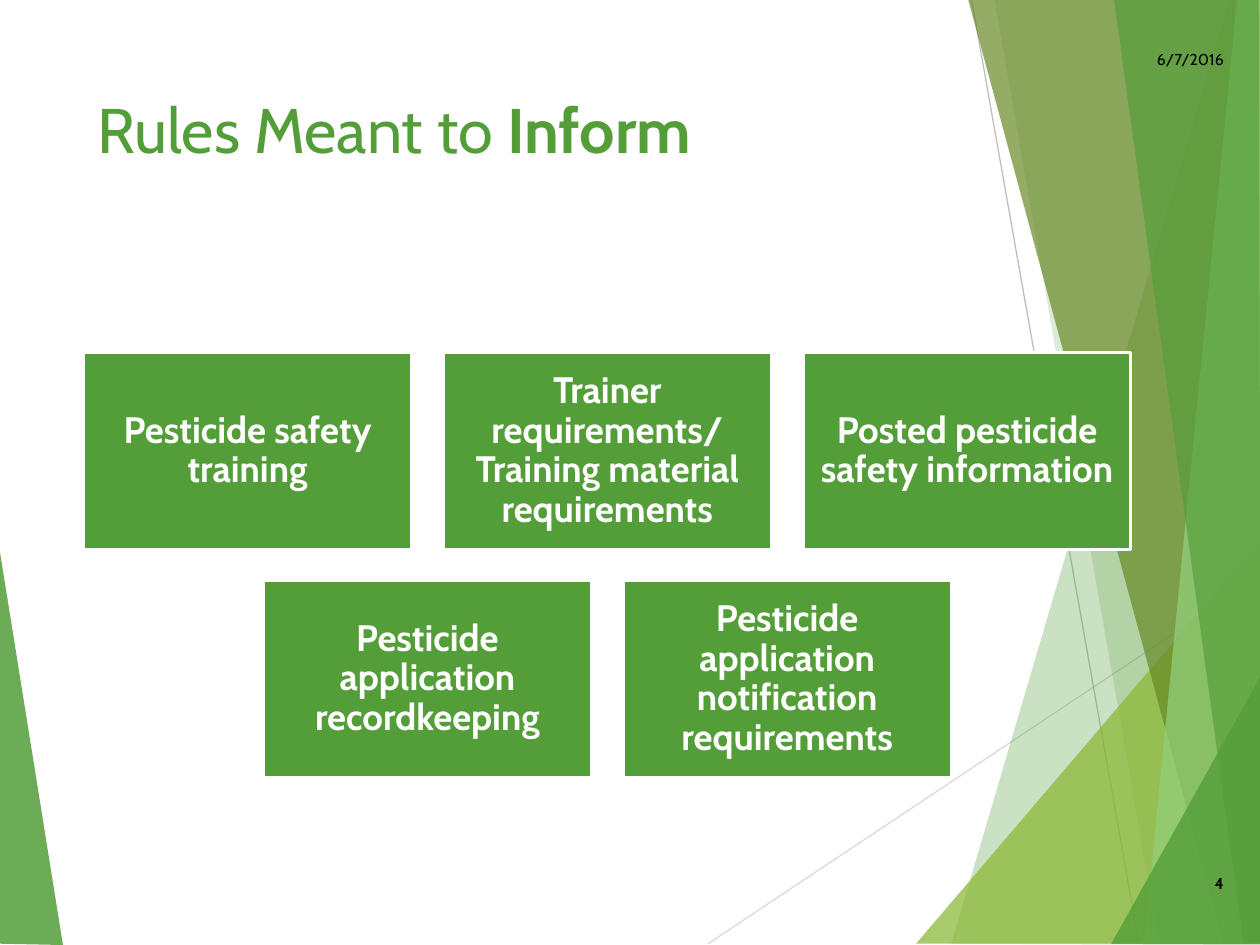
from dataclasses import dataclass

from lxml import etree
from pptx import Presentation
from pptx.dml.color import RGBColor
from pptx.enum.shapes import MSO_CONNECTOR, MSO_SHAPE
from pptx.enum.text import MSO_ANCHOR, PP_ALIGN
from pptx.oxml.ns import qn
from pptx.util import Inches, Pt

STRAIGHT = MSO_CONNECTOR.STRAIGHT
RECT = MSO_SHAPE.RECTANGLE
TOP, MIDDLE = MSO_ANCHOR.TOP, MSO_ANCHOR.MIDDLE
LEFT, CENTER, RIGHT = PP_ALIGN.LEFT, PP_ALIGN.CENTER, PP_ALIGN.RIGHT


@dataclass(frozen=True)
class Theme:
    font: str = "Cabin"
    green: str = "549E39"
    lime: str = "8AB833"
    olive: str = "678A26"
    mint: str = "93D07D"
    white: str = "FFFFFF"
    black: str = "000000"
    pale_gray: str = "D9D9D9"
    gray: str = "BFBFBF"
    title_size: int = 36
    box_size: int = 21
    small_size: int = 9


theme = Theme()


def rgb(color):
    return RGBColor.from_string(color)


def style_text(p, size, color, align, bold=False):
    p.alignment = align
    for r in p.runs:
        r.font.name = theme.font
        r.font.size = Pt(size)
        r.font.color.rgb = rgb(color)
        r.font.bold = bold


prs = Presentation()
prs.slide_width, prs.slide_height = Inches(10), Inches(7.5)
s = prs.slides.add_slide(prs.slide_layouts[5])

# Background facets: points, colour, opacity in percent; the thin lines lie above the first
left_facet = ([(0, 4.38), (0.5, 7.5), (0, 7.49)], theme.green, 85)
right_facets = [
    ([(9.76, -0.01), (7.55, 7.49), (10.03, 7.5), (10.02, 0)], theme.green, 30),
    ([(7.89, -0.02), (9.2, 7.49), (10.02, 7.49), (10.02, -0.02)], theme.green, 20),
    ([(7.27, 7.49), (10.01, 4.28), (10.02, 7.49)], theme.lime, 72),
    ([(7.68, -0.02), (9.71, 7.49), (10.02, 7.48), (10.02, -0.02)], theme.olive, 70),
    ([(9.82, -0.02), (9.08, 7.49), (10.02, 7.49), (10.01, -0.02)], theme.mint, 70),
    ([(8.84, -0.02), (9.87, 7.49), (10.01, 7.49), (9.99, -0.02)], theme.green, 65),
    ([(8.82, 7.49), (10.02, 5.34), (10.02, 7.49)], theme.green, 80),
]
lines = [
    ((5.62, 7.49), (10.02, 4.56), theme.pale_gray),
    ((7.71, -0.01), (9.04, 7.49), theme.gray),
]

for start, end, color in lines:
    line = s.shapes.add_connector(STRAIGHT, *(Inches(v) for v in start + end))
    line.line.color.rgb = rgb(color)
    line.line.width = Pt(0.75)
    etree.SubElement(line._element.spPr, qn("a:effectLst"))

for points, color, opacity in [left_facet] + right_facets:
    corners = [(Inches(x), Inches(y)) for x, y in points]
    builder = s.shapes.build_freeform(*corners[0])
    builder.add_line_segments(corners[1:], close=True)
    facet = builder.convert_to_shape()
    facet.shadow.inherit = False
    facet.fill.solid()
    facet.fill.fore_color.rgb = rgb(color)
    facet.line.fill.background()
    srgb = facet._element.spPr.find(qn("a:solidFill")).find(qn("a:srgbClr"))
    etree.SubElement(srgb, qn("a:alpha"), val=str(opacity * 1000))

# Title
title = s.shapes.title
title.left, title.top = Inches(0.67), Inches(0.67)
title.width, title.height = Inches(6.94), Inches(1.44)
tf = title.text_frame
tf.vertical_anchor = TOP
p = tf.paragraphs[0]
p.text = "Rules Meant to "
p.add_run().text = "Inform"
style_text(p, theme.title_size, theme.green, LEFT)
p.runs[-1].font.bold = True
# Keep the title in front of the facets
s.shapes._spTree.append(title._element)

# Rule boxes: each row is centred on the same axis
box_w, box_h = 2.6, 1.56
step_x, step_y = 2.855, 1.81
center_x, first_top = 4.82, 2.8
rows = [
    [
        "Pesticide safety training",
        "Trainer requirements/ Training material requirements",
        "Posted pesticide safety information",
    ],
    [
        "Pesticide application recordkeeping",
        "Pesticide application notification requirements",
    ],
]
for i, row in enumerate(rows):
    row_left = center_x - ((len(row) - 1) * step_x + box_w) / 2
    for j, text in enumerate(row):
        box = s.shapes.add_shape(
            RECT, Inches(row_left + j * step_x), Inches(first_top + i * step_y),
            Inches(box_w), Inches(box_h))
        box.shadow.inherit = False
        box.fill.solid()
        box.fill.fore_color.rgb = rgb(theme.green)
        box.line.color.rgb = rgb(theme.white)
        box.line.width = Pt(1.5)
        tf = box.text_frame
        tf.word_wrap = True
        tf.vertical_anchor = MIDDLE
        tf.margin_left = tf.margin_right = Inches(0.09)
        tf.margin_top = tf.margin_bottom = Inches(0.09)
        tf.text = text
        tf.paragraphs[0].line_spacing = 0.9
        style_text(tf.paragraphs[0], theme.box_size, theme.white, CENTER, bold=True)

# Date and slide number share a right edge
right_edge = 9.81
for text, top, width, bold in [("6/7/2016", 0.27, 0.75, False), ("4", 6.81, 0.56, True)]:
    label = s.shapes.add_textbox(
        Inches(right_edge - width), Inches(top), Inches(width), Inches(0.4))
    tf = label.text_frame
    tf.word_wrap = True
    tf.vertical_anchor = MIDDLE
    tf.text = text
    style_text(tf.paragraphs[0], theme.small_size, theme.black, RIGHT, bold)

prs.save("out.pptx")
